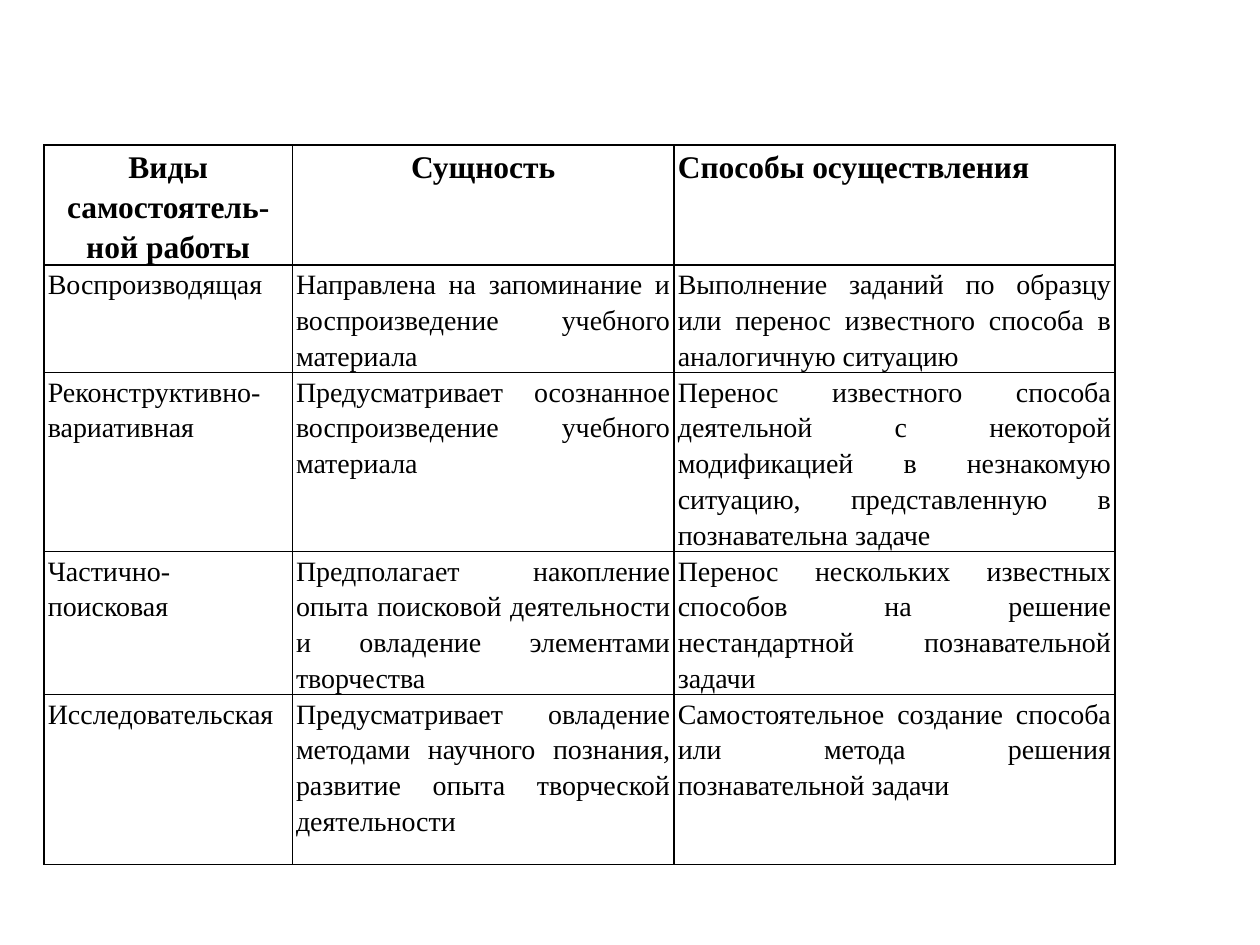
from lxml import etree
from pptx import Presentation
from pptx.dml.color import RGBColor
from pptx.enum.text import PP_ALIGN
from pptx.oxml.ns import qn
from pptx.util import Inches, Pt

LEFT, MID, JUST = PP_ALIGN.LEFT, PP_ALIGN.CENTER, PP_ALIGN.JUSTIFY
BLACK, WHITE = "000000", "FFFFFF"
COLS = [1.97, 3.03, 3.5]
ROWS = [0.95, 0.85, 1.42, 1.13, 1.35]
HEAD = {"name": "Times New Roman", "size": Pt(18), "bold": True}
BODY = {"name": "Times New Roman", "size": Pt(16), "bold": False}
PADS = {
    "margin_left": Inches(0.03),
    "margin_right": Inches(0.03),
    "margin_top": 0,
    "margin_bottom": 0,
}
DATA = [
    ["Виды самостоятель-ной работы", "Сущность", "Способы осуществления"],
    ["Воспроизводящая",
     "Направлена на запоминание и воспроизведение учебного материала",
     "Выполнение заданий по образцу или перенос известного способа в "
     "аналогичную ситуацию"],
    ["Реконструктивно-вариативная",
     "Предусматривает осознанное воспроизведение учебного материала",
     "Перенос известного способа деятельной с некоторой модификацией в "
     "незнакомую ситуацию, представленную в познавательна задаче"],
    ["Частично-поисковая",
     "Предполагает накопление опыта поисковой деятельности и овладение "
     "элементами творчества",
     "Перенос нескольких известных способов на решение нестандартной "
     "познавательной задачи"],
    ["Исследовательская",
     "Предусматривает овладение методами научного познания, развитие опыта "
     "творческой деятельности",
     "Самостоятельное создание способа или метода решения познавательной "
     "задачи"],
]


def color(code):
    return RGBColor.from_string(code)


def apply(item, values):
    for key, value in values.items():
        setattr(item, key, value)


def border(cell):
    props = cell._tc.get_or_add_tcPr()
    for spot, side in enumerate(("lnL", "lnR", "lnT", "lnB")):
        line = etree.Element(qn(f"a:{side}"), w=str(Pt(1)))
        fill = etree.SubElement(line, qn("a:solidFill"))
        etree.SubElement(fill, qn("a:srgbClr"), val=BLACK)
        props.insert(spot, line)


def write(cell, text, font, align):
    cell.text = text
    apply(cell, PADS)
    cell.fill.solid()
    cell.fill.fore_color.rgb = color(WHITE)
    border(cell)
    para = cell.text_frame.paragraphs[0]
    apply(para, {"alignment": align, "line_spacing": 1.15})
    run = para.runs[0]
    apply(run.font, font)
    run.font.color.rgb = color(BLACK)


def grid(slide, left, top, width, height):
    frame = slide.shapes.add_table(len(ROWS), len(COLS), left, top, width, height)
    table = frame.table
    apply(table, {"first_row": False, "horz_banding": False})
    for col, size in zip(table.columns, COLS):
        col.width = Inches(size)
    for row, size in zip(table.rows, ROWS):
        row.height = Inches(size)
    for r, texts in enumerate(DATA):
        for c, text in enumerate(texts):
            if r == 0:
                font, align = HEAD, LEFT if c == 2 else MID
            else:
                font, align = BODY, JUST
            write(table.cell(r, c), text, font, align)


def main():
    deck = Presentation()
    apply(deck, {"slide_width": Inches(10), "slide_height": Inches(7.5)})
    slide = deck.slides.add_slide(deck.slide_layouts[6])
    grid(slide, Inches(0.35), Inches(1.15), Inches(sum(COLS)), Inches(sum(ROWS)))
    deck.save("out.pptx")


if __name__ == "__main__":
    main()
